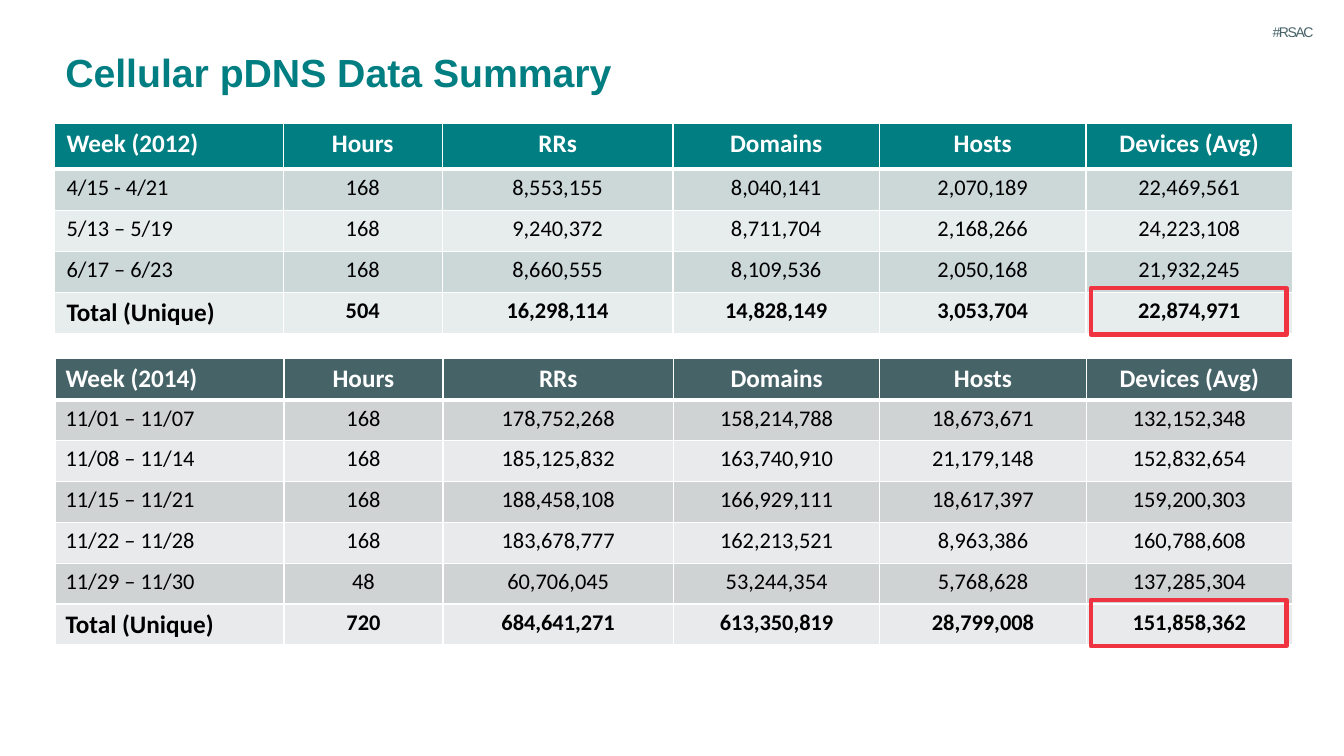
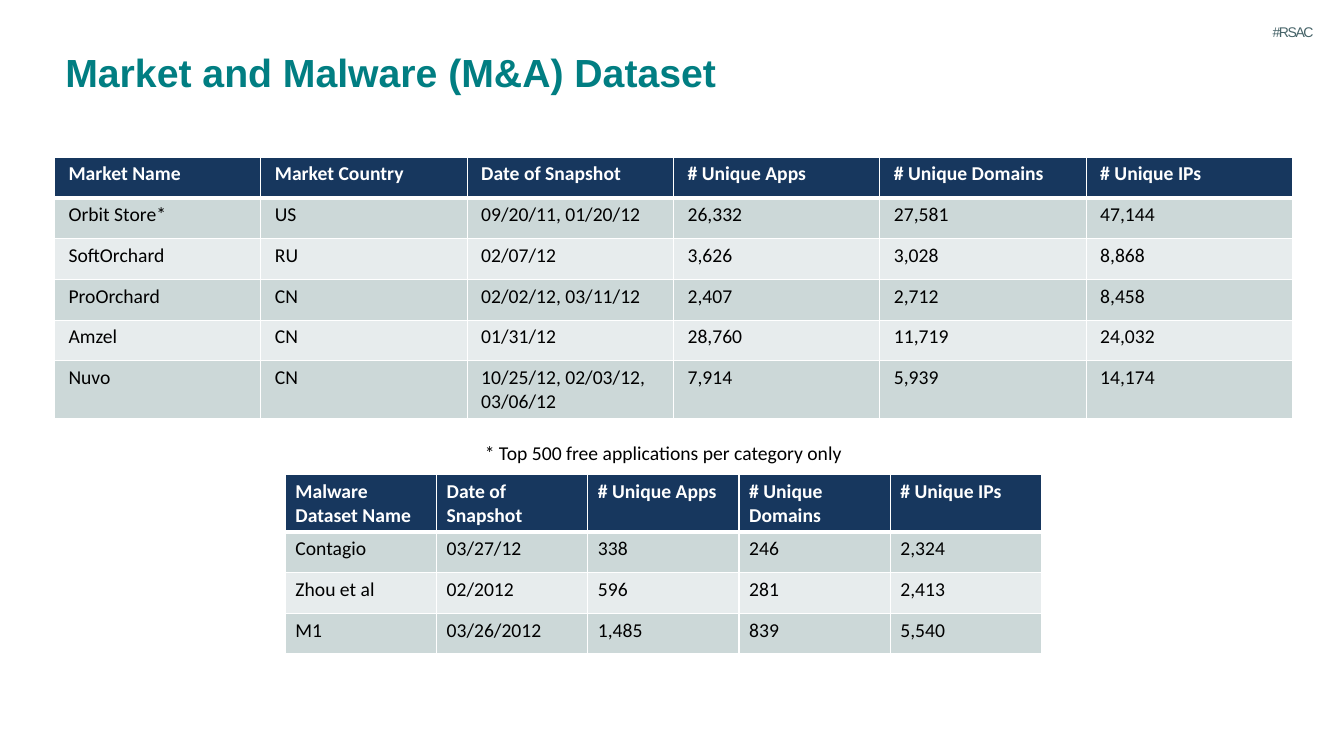
from collections import namedtuple

from lxml import etree
from pptx import Presentation
from pptx.dml.color import RGBColor
from pptx.enum.shapes import MSO_SHAPE as Shape
from pptx.enum.text import MSO_ANCHOR as Anchor, PP_ALIGN as Align
from pptx.oxml.ns import qn
from pptx.util import Inches, Pt

Box = namedtuple("Box", "left top width height")
Palette = namedtuple("Palette", "header odd even")

WHITE, BLACK, TEAL, SLATE, NAVY, RED = (
    "FFFFFF", "000000", "017E82", "466368", "17375E", "EF3340")
TEAL_ROWS = Palette(TEAL, "CCD8D8", "E7ECED")
SLATE_ROWS = Palette(SLATE, "CFD3D4", "E9EAEB")
NAVY_ROWS = Palette(NAVY, "CCD8D8", "E7ECED")

TITLE_FONT = {"name": "Arial", "size": Pt(28), "bold": True}
TAG_FONT = {"name": "Arial", "size": Pt(10)}
NOTE_FONT = {"name": "Calibri", "size": Pt(14)}

TITLE_BOX = Box(0.55, 0.11, 11.94, 1.25)
TAG_BOX = Box(12.49, 0.23, 0.67, 0.17)
TALL_ROW = 0.57

COUNT_COLUMNS = ["Hours", "RRs", "Domains", "Hosts", "Devices (Avg)"]
COUNT_WIDTHS = [2.27, 1.58, 2.29, 2.05, 2.05, 2.05]
WEEKS_2012 = [
    ["Week (2012)", *COUNT_COLUMNS],
    ["4/15 - 4/21", "168", "8,553,155", "8,040,141", "2,070,189", "22,469,561"],
    ["5/13 – 5/19", "168", "9,240,372", "8,711,704", "2,168,266", "24,223,108"],
    ["6/17 – 6/23", "168", "8,660,555", "8,109,536", "2,050,168", "21,932,245"],
    ["Total (Unique)", "504", "16,298,114", "14,828,149", "3,053,704", "22,874,971"],
]
WEEKS_2014 = [
    ["Week (2014)", *COUNT_COLUMNS],
    ["11/01 – 11/07", "168", "178,752,268", "158,214,788", "18,673,671", "132,152,348"],
    ["11/08 – 11/14", "168", "185,125,832", "163,740,910", "21,179,148", "152,832,654"],
    ["11/15 – 11/21", "168", "188,458,108", "166,929,111", "18,617,397", "159,200,303"],
    ["11/22 – 11/28", "168", "183,678,777", "162,213,521", "8,963,386", "160,788,608"],
    ["11/29 – 11/30", "48", "60,706,045", "53,244,354", "5,768,628", "137,285,304"],
    ["Total (Unique)", "720", "684,641,271", "613,350,819", "28,799,008", "151,858,362"],
]
UNIQUE_COLUMNS = ["# Unique Apps", "# Unique Domains", "# Unique IPs"]
MARKETS = [
    ["Market Name", "Market Country", "Date of Snapshot", *UNIQUE_COLUMNS],
    ["Orbit Store*", "US", "09/20/11, 01/20/12", "26,332", "27,581", "47,144"],
    ["SoftOrchard", "RU", "02/07/12", "3,626", "3,028", "8,868"],
    ["ProOrchard", "CN", "02/02/12, 03/11/12", "2,407", "2,712", "8,458"],
    ["Amzel", "CN", "01/31/12", "28,760", "11,719", "24,032"],
    ["Nuvo", "CN", "10/25/12, 02/03/12, 03/06/12", "7,914", "5,939", "14,174"],
]
MALWARE = [
    ["Malware Dataset Name", "Date of Snapshot", *UNIQUE_COLUMNS],
    ["Contagio", "03/27/12", "338", "246", "2,324"],
    ["Zhou et al", "02/2012", "596", "281", "2,413"],
    ["M1", "03/26/2012", "1,485", "839", "5,540"],
]


def rgb(value):
    return RGBColor.from_string(value)


def set_all(target, values):
    for name, value in values.items():
        setattr(target, name, value)


def style_font(font, values, color):
    set_all(font, values)
    font.color.rgb = rgb(color)


def add_text(page, box, text, values, color, align=Align.LEFT, frame_values=None):
    """Add a one-paragraph text box and return its paragraph."""
    frame = page.shapes.add_textbox(*map(Inches, box)).text_frame
    set_all(frame, {"word_wrap": True, **(frame_values or {})})
    para = frame.paragraphs[0]
    para.alignment = align
    span = para.add_run()
    span.text = text
    style_font(span.font, values, color)
    return para


def set_border(cell, side, points):
    cell_props = cell._tc.get_or_add_tcPr()
    line = etree.SubElement(cell_props, qn(f"a:ln{side}"), w=str(Pt(points)))
    fill = etree.SubElement(line, qn("a:solidFill"))
    etree.SubElement(fill, qn("a:srgbClr"), val=WHITE)


def add_grid(page, box, rows, palette, widths=None, size=14, header_size=14,
             side_margin=0.1, centered=False, total=False, tall_rows=None):
    """Add a banded table; rows not in tall_rows share the remaining height."""
    widths = widths or [1] * len(rows[0])
    tall_rows = tall_rows or {}
    plain_height = (box.height - sum(tall_rows.values())) / (len(rows) - len(tall_rows))
    table = page.shapes.add_table(
        len(rows), len(widths), *map(Inches, box)).table
    for column, width in zip(table.columns, widths):
        column.width = Inches(box.width * width / sum(widths))

    for r, texts in enumerate(rows):
        table.rows[r].height = Inches(tall_rows.get(r, plain_height))
        is_header, is_total = r == 0, total and r == len(rows) - 1
        fill = palette.header if is_header else palette.odd if r % 2 else palette.even
        for c, text in enumerate(texts):
            cell = table.cell(r, c)
            set_all(cell, {"margin_left": Inches(side_margin),
                           "margin_right": Inches(side_margin)})
            for side, points in {"L": 1, "R": 1, "T": 3 if r == 1 else 1,
                                 "B": 3 if is_header else 1}.items():
                set_border(cell, side, points)
            cell.fill.solid()
            cell.fill.fore_color.rgb = rgb(fill)
            para = cell.text_frame.paragraphs[0]
            para.alignment = Align.CENTER if centered and c else Align.LEFT
            span = para.add_run()
            span.text = text
            large = is_header or (is_total and c == 0)
            style_font(span.font, {"name": "Calibri", "bold": is_header or is_total,
                                   "size": Pt(header_size if large else size)},
                       WHITE if is_header else BLACK)


def add_highlight(page, table_box):
    """Frame the bottom right cell of a table."""
    width, height = 1.94, 0.46
    left = table_box.left + table_box.width - width - 0.06
    top = table_box.top + table_box.height - height + 0.01
    frame = page.shapes.add_shape(
        Shape.RECTANGLE, *map(Inches, (left, top, width, height)))
    frame.shadow.inherit = False
    frame.fill.background()
    frame.line.color.rgb = rgb(RED)
    frame.line.width = Pt(3)


def add_page(deck, title):
    """Add a slide with the shared corner tag and title."""
    page = deck.slides.add_slide(deck.slide_layouts[6])
    no_margins = {f"margin_{side}": 0 for side in ("left", "top", "right", "bottom")}
    tag = add_text(page, TAG_BOX, "#RSAC", TAG_FONT, SLATE, Align.CENTER,
                   {"vertical_anchor": Anchor.MIDDLE, **no_margins})
    tag.runs[0].font._element.set("spc", "-100")
    heading = add_text(page, TITLE_BOX, title, TITLE_FONT, TEAL,
                       frame_values={"vertical_anchor": Anchor.MIDDLE})
    heading.line_spacing = Pt(30)
    return page


def add_summary_page(deck):
    page = add_page(deck, "Cellular pDNS Data Summary")
    box_2012 = Box(0.54, 1.22, 12.28, 2.09)
    box_2014 = Box(0.55, 3.56, 12.27, 2.84)
    shared = {"widths": COUNT_WIDTHS, "size": 16, "header_size": 18,
              "centered": True, "total": True}
    add_grid(page, box_2012, WEEKS_2012, TEAL_ROWS, side_margin=0.12,
             tall_rows={0: 0.46}, **shared)
    add_grid(page, box_2014, WEEKS_2014, SLATE_ROWS, **shared)
    for box in (box_2012, box_2014):
        add_highlight(page, box)


def add_dataset_page(deck):
    page = add_page(deck, "Market and Malware (M&A) Dataset")
    add_grid(page, Box(0.54, 1.56, 12.28, 2.59), MARKETS, NAVY_ROWS,
             side_margin=0.14, tall_rows={len(MARKETS) - 1: TALL_ROW})
    add_grid(page, Box(2.83, 4.71, 7.5, 1.78), MALWARE, NAVY_ROWS,
             tall_rows={0: TALL_ROW})
    add_text(page, Box(2.08, 4.33, 9, 0.34),
             "* Top 500 free applications per category only",
             NOTE_FONT, BLACK, Align.CENTER)


def main():
    deck = Presentation()
    set_all(deck, {"slide_width": Inches(13.33), "slide_height": Inches(7.5)})
    add_summary_page(deck)
    add_dataset_page(deck)
    deck.save("out.pptx")


if __name__ == "__main__":
    main()
